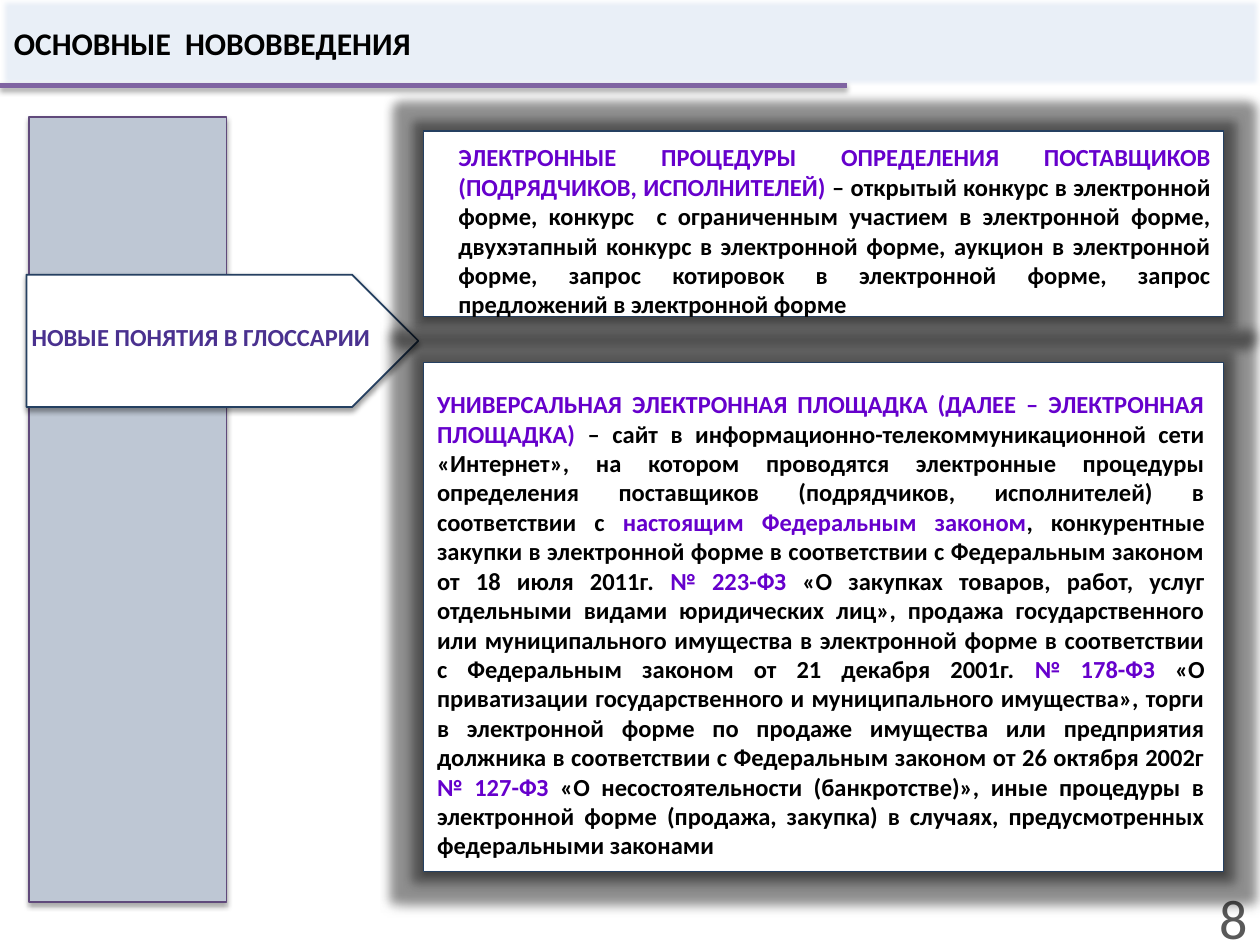
from lxml import etree
from pptx import Presentation
from pptx import util as u
from pptx.dml.color import RGBColor
from pptx.enum import shapes, text
from pptx.oxml import ns

COLOURS = {
    "black": "000000", "white": "FFFFFF", "header": "E9EFF7", "rule": "8064A2",
    "band": "BEC7D4", "band_edge": "604A7B", "navy": "254061",
    "label": "4A318F", "term": "6600CC", "number": "595959",
}
PROCEDURES = [
    ("ЭЛЕКТРОННЫЕ ПРОЦЕДУРЫ ОПРЕДЕЛЕНИЯ ПОСТАВЩИКОВ (ПОДРЯДЧИКОВ, ИСПОЛНИТЕЛЕЙ) ", "term"),
    ("– открытый конкурс в электронной форме, конкурс  с ограниченным участием в "
     "электронной форме, двухэтапный конкурс в электронной форме, аукцион в электронной "
     "форме, запрос котировок в электронной форме, запрос предложений в электронной форме",
     "black"),
]
PLATFORM = [
    ("УНИВЕРСАЛЬНАЯ ЭЛЕКТРОННАЯ ПЛОЩАДКА (ДАЛЕЕ – ЭЛЕКТРОННАЯ ПЛОЩАДКА) ", "term"),
    ("– сайт в информационно-телекоммуникационной сети «Интернет», на котором проводятся "
     "электронные процедуры определения поставщиков (подрядчиков, исполнителей) в "
     "соответствии с ", "black"),
    ("настоящим Федеральным законом", "term"),
    (", конкурентные закупки в электронной форме в соответствии с Федеральным законом "
     "от 18 июля 2011г. ", "black"),
    ("№ 223-ФЗ ", "term"),
    ("«О закупках товаров, работ, услуг отдельными видами юридических лиц», продажа "
     "государственного или муниципального имущества в электронной форме в соответствии "
     "с Федеральным законом от 21 декабря 2001г. ", "black"),
    ("№ 178-ФЗ ", "term"),
    ("«О приватизации государственного и муниципального имущества», торги в электронной "
     "форме по продаже имущества или предприятия должника в соответствии с Федеральным "
     "законом от 26 октября 2002г ", "black"),
    ("№ 127-ФЗ ", "term"),
    ("«О несостоятельности (банкротстве)», иные процедуры в электронной форме (продажа, "
     "закупка) в случаях, предусмотренных федеральными законами", "black"),
]


class SlideBuilder:
    """Holds the style and the current slide, and adds each kind of element."""

    def __init__(self, deck, font="Calibri"):
        self.font = font
        self.slide = deck.slides.add_slide(deck.slide_layouts[5])

    def colour(self, name):
        return RGBColor.from_string(COLOURS[name])

    def place(self, item, area):
        for name, value in zip(("left", "top", "width", "height"), area):
            setattr(item, name, u.Inches(value))

    def effects(self, item, shadow=None, glow=None, soft=None):
        effect_list = etree.SubElement(item._element.spPr, ns.qn("a:effectLst"))

        def add(tag, opacity=None, **sizes):
            effect = etree.SubElement(effect_list, ns.qn(tag))
            for name, value in sizes.items():
                effect.set(name, str(value))
            if opacity:
                tint = etree.SubElement(effect, ns.qn("a:srgbClr"), val=COLOURS["black"])
                etree.SubElement(tint, ns.qn("a:alpha"), val=str(opacity * 1000))

        if glow:
            add("a:glow", 35, rad=u.Pt(glow))
        if shadow:
            add("a:outerShdw", shadow, blurRad=u.Pt(3.1), dist=u.Pt(1.7),
                dir=5400000, rotWithShape=0)
        if soft:
            add("a:softEdge", rad=u.Pt(soft))

    def fill_text(self, item, spans, size, align, anchor, bold=True, grow=False):
        frame = item.text_frame
        fit = text.MSO_AUTO_SIZE.SHAPE_TO_FIT_TEXT if grow else text.MSO_AUTO_SIZE.NONE
        settings = {"word_wrap": True, "auto_size": fit, "vertical_anchor": anchor}
        for name, value in settings.items():
            setattr(frame, name, value)
        para = frame.paragraphs[0]
        para.alignment = align
        for words, tint in spans:
            span = para.add_run()
            span.text = words
            for name, value in {"name": self.font, "size": u.Pt(size), "bold": bold}.items():
                setattr(span.font, name, value)
            span.font.color.rgb = self.colour(tint)

    def title(self, words, area):
        title = self.slide.shapes.title
        self.place(title, area)
        title.fill.solid()
        title.fill.fore_color.rgb = self.colour("header")
        self.effects(title, soft=2.5)
        self.fill_text(title, [(words, "black")], 18, text.PP_ALIGN.LEFT,
                       text.MSO_ANCHOR.MIDDLE)

    def rule(self, left, right, top):
        line = self.slide.shapes.add_connector(
            shapes.MSO_CONNECTOR.STRAIGHT, *map(u.Inches, (left, top, right, top)))
        line.line.color.rgb = self.colour("rule")
        line.line.width = u.Pt(3)
        self.effects(line, shadow=35)

    def block(self, kind, area, fill, edge, width=0.75, **effects):
        block = self.slide.shapes.add_shape(kind, *map(u.Inches, area))
        block.fill.solid()
        block.fill.fore_color.rgb = self.colour(fill)
        block.line.color.rgb = self.colour(edge)
        block.line.width = u.Pt(width)
        self.effects(block, **effects)

    def label(self, spans, area, size=14, align=text.PP_ALIGN.JUSTIFY,
              anchor=text.MSO_ANCHOR.TOP, **options):
        box = self.slide.shapes.add_textbox(*map(u.Inches, area))
        self.fill_text(box, spans, size, align, anchor, **options)


def main():
    deck = Presentation()
    deck.slide_width, deck.slide_height = u.Inches(10), u.Inches(7.5)
    page = SlideBuilder(deck)
    shape = shapes.MSO_SHAPE

    page.title("ОСНОВНЫЕ  НОВОВВЕДЕНИЯ", (0.01, 0, 9.99, 0.68))
    page.rule(0, 6.72, 0.68)
    page.label([("8", "number")], (9.34, 7.05, 0.66, 0.45), 32, text.PP_ALIGN.RIGHT,
               text.MSO_ANCHOR.MIDDLE, bold=False)

    page.block(shape.RECTANGLE, (0.23, 0.93, 1.57, 6.23), "band", "band_edge", shadow=35)
    page.block(shape.PENTAGON, (0.21, 2.18, 3.11, 1.05), "white", "navy", 1, shadow=38)
    page.label([("НОВЫЕ ПОНЯТИЯ В ГЛОССАРИИ", "label")], (0.09, 2.51, 3.01, 0.34),
               align=text.PP_ALIGN.CENTER, grow=True)

    for top, height in ((1.04, 1.47), (2.88, 4.04)):
        page.block(shape.RECTANGLE, (3.36, top, 6.35, height), "white", "navy",
                   shadow=38, glow=12)
    page.label(PROCEDURES, (3.54, 1.08, 6.17, 1.51), grow=True)
    page.label(PLATFORM, (3.37, 3.04, 6.29, 3.87), grow=True)

    deck.save("out.pptx")


if __name__ == "__main__":
    main()
